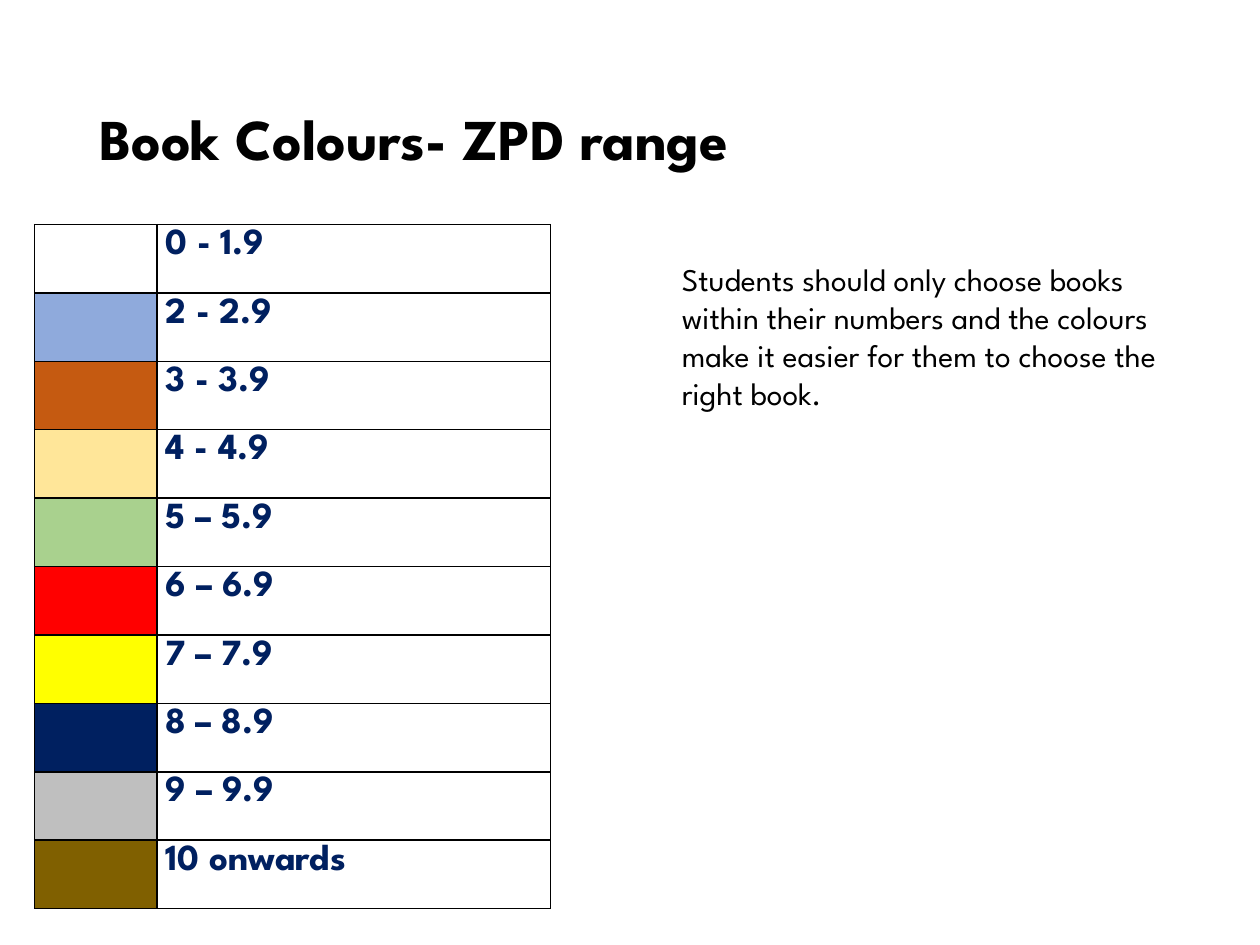
import pptx
import pptx.dml.color
import pptx.enum.text
import pptx.oxml
import pptx.oxml.ns
import pptx.util

Pt = pptx.util.Pt
FACE = "League Spartan"
NAVY = "002060"
BLACK = "000000"
WHITE = "FFFFFF"
BANDS = [
    ("0 - 1.9", WHITE),
    ("2 - 2.9", "8FAADC"),
    ("3 - 3.9", "C55A11"),
    ("4 - 4.9", "FFE699"),
    ("5 – 5.9", "A9D18E"),
    ("6 – 6.9", "FF0000"),
    ("7 – 7.9", "FFFF00"),
    ("8 – 8.9", NAVY),
    ("9 – 9.9", "BFBFBF"),
    ("10 onwards", "806000"),
]


def tint(hue):
    return pptx.dml.color.RGBColor.from_string(hue)


def assign(item, form):
    for key, value in form.items():
        setattr(item, key, value)


def paint(item, hue):
    item.fill.solid()
    item.fill.fore_color.rgb = tint(hue)


def write(frame, text, hue, size, bold=False):
    frame.text = text
    font = frame.paragraphs[0].font
    assign(font, {"name": FACE, "size": Pt(size), "bold": bold})
    font.color.rgb = tint(hue)


def panel(shape, box):
    sides = ("left", "top", "width", "height")
    assign(shape, {side: Pt(part) for side, part in zip(sides, box)})
    paint(shape, WHITE)
    shape.line.color.rgb = tint(WHITE)
    shape.line.width = Pt(0.75)
    return shape.text_frame


def heading(slide, text):
    frame = panel(slide.shapes.title, (49.5, 28.8, 620.5, 104.5))
    write(frame, text, BLACK, 33, True)
    assign(frame, {
        "auto_size": pptx.enum.text.MSO_AUTO_SIZE.NONE,
        "vertical_anchor": pptx.enum.text.MSO_ANCHOR.MIDDLE,
    })
    assign(frame.paragraphs[0], {
        "alignment": pptx.enum.text.PP_ALIGN.LEFT,
        "line_spacing": 0.9,
    })


def note(slide, text):
    box = (382.5, 145.3, 292.5, 94.5)
    shape = slide.shapes.add_textbox(*map(Pt, box))
    frame = panel(shape, box)
    write(frame, text, BLACK, 18)
    assign(frame, {
        "word_wrap": True,
        "auto_size": pptx.enum.text.MSO_AUTO_SIZE.SHAPE_TO_FIT_TEXT,
    })


def border(cell):
    props = cell._tc.get_or_add_tcPr()
    for spot, side in enumerate(("lnL", "lnR", "lnT", "lnB")):
        line = pptx.oxml.parse_xml(
            f'<a:{side} {pptx.oxml.ns.nsdecls("a")} w="{Pt(1)}">'
            f'<a:solidFill><a:srgbClr val="{BLACK}"/></a:solidFill></a:{side}>'
        )
        props.insert(spot, line)


def chart(slide, bands):
    high = 39.1
    wide = (69.9, 225)
    frame = slide.shapes.add_table(
        len(bands), len(wide), Pt(19.8), Pt(128.3), Pt(sum(wide)), Pt(high * len(bands))
    )
    table = frame.table
    assign(table, {"first_row": False, "horz_banding": False})
    for column, width in zip(table.columns, wide):
        column.width = Pt(width)
    for row, (text, hue) in zip(table.rows, bands):
        row.height = Pt(high)
        swatch, label = row.cells
        write(label.text_frame, text, NAVY, 21, True)
        for cell, shade in ((swatch, hue), (label, WHITE)):
            assign(cell, {
                "margin_left": Pt(5),
                "margin_right": Pt(5),
                "margin_top": Pt(2.6),
                "margin_bottom": Pt(2.6),
            })
            paint(cell, shade)
            border(cell)


def main():
    deck = pptx.Presentation()
    assign(deck, {"slide_width": Pt(720), "slide_height": Pt(540)})
    slide = deck.slides.add_slide(deck.slide_layouts[5])
    heading(slide, "Book Colours- ZPD range")
    chart(slide, BANDS)
    note(
        slide,
        "Students should only choose books within their numbers and the "
        "colours make it easier for them to choose the right book.",
    )
    deck.save("out.pptx")


if __name__ == "__main__":
    main()
